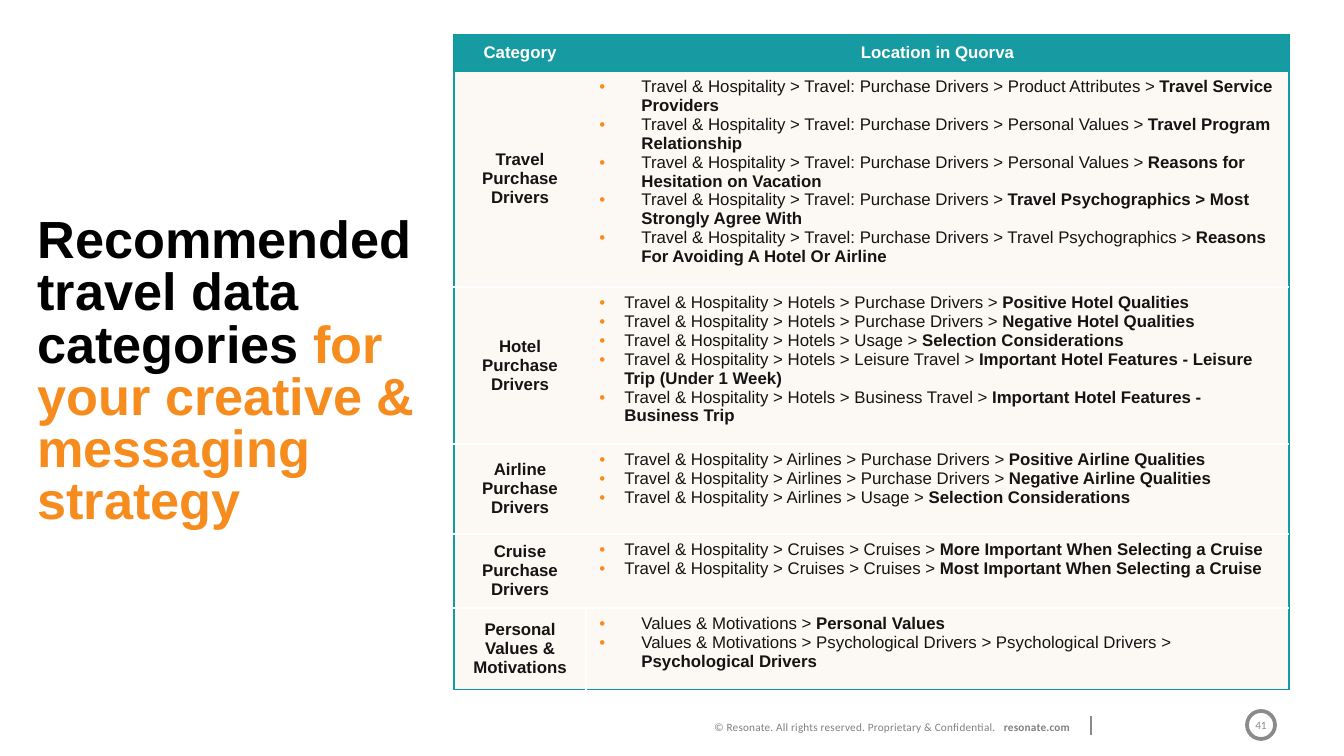
import pptx
import pptx.util
import pptx.dml.color
import pptx.enum.shapes
import pptx.enum.text
import pptx.oxml.ns
import lxml.etree

EMU_PER_PX = 914400 / 134.4
COLORS = {
    "teal": "119CA3", "header": "179BA2", "cream": "FCF8F3", "white": "FFFFFF",
    "black": "000000", "ink": "141414", "orange": "F68C1E",
    "footer": "808080", "gray": "8A8A8A",
}
ALIGN = pptx.enum.text.PP_ALIGN
ANCHOR = pptx.enum.text.MSO_ANCHOR
qn = pptx.oxml.ns.qn


def px(*lengths):
    return [pptx.util.Emu(round(length * EMU_PER_PX)) for length in lengths]


def add_span(para, text, color, **formats):
    span = para.add_run()
    span.text = text
    for name, value in formats.items():
        setattr(span.font, name, value)
    span.font.color.rgb = pptx.dml.color.RGBColor.from_string(COLORS[color])
    return span


deck = pptx.Presentation()
deck.slide_width, deck.slide_height = px(1344, 756)
page = deck.slides.add_slide(deck.slide_layouts[5])

# Title
title = page.shapes.title
title.left, title.top, title.width, title.height = px(24, 210, 487, 301)
frame = title.text_frame
frame.auto_size = pptx.enum.text.MSO_AUTO_SIZE.NONE
frame.vertical_anchor = ANCHOR.TOP
para = frame.paragraphs[0]
para.alignment = ALIGN.LEFT
para.line_spacing = pptx.util.Pt(28)
title_format = {"name": "Arial", "size": pptx.util.Pt(28), "bold": True}
add_span(para, "Recommended travel data categories ", "black", **title_format)
add_span(para, "for your creative & messaging strategy", "orange", **title_format)

# Table content: category, bullet indent, shared start of path, (path, data set)
DRIVERS = "Travel & Hospitality > Travel: Purchase Drivers > "
HOTELS = "Travel & Hospitality > Hotels > "
AIRLINES = "Travel & Hospitality > Airlines > "
CRUISES = "Travel & Hospitality > Cruises > Cruises > "
VALUES = "Values & Motivations > "
sections = [
    ("Travel Purchase Drivers", 42, DRIVERS, [
        ("Product Attributes > ", "Travel Service Providers"),
        ("Personal Values > ", "Travel Program Relationship"),
        ("Personal Values > ", "Reasons for Hesitation on Vacation"),
        ("", "Travel Psychographics > Most Strongly Agree With"),
        ("Travel Psychographics > ", "Reasons For Avoiding A Hotel Or Airline"),
    ]),
    ("Hotel Purchase Drivers", 25, HOTELS, [
        ("Purchase Drivers > ", "Positive Hotel Qualities"),
        ("Purchase Drivers > ", "Negative Hotel Qualities"),
        ("Usage > ", "Selection Considerations"),
        ("Leisure Travel > ", "Important Hotel Features - Leisure Trip (Under 1 Week)"),
        ("Business Travel > ", "Important Hotel Features - Business Trip"),
    ]),
    ("Airline Purchase Drivers", 25, AIRLINES, [
        ("Purchase Drivers > ", "Positive Airline Qualities"),
        ("Purchase Drivers > ", "Negative Airline Qualities"),
        ("Usage > ", "Selection Considerations"),
    ]),
    ("Cruise Purchase Drivers", 25, CRUISES, [
        ("", "More Important When Selecting a Cruise"),
        ("", "Most Important When Selecting a Cruise"),
    ]),
    ("Personal Values & Motivations", 42, VALUES, [
        ("", "Personal Values"),
        ("Psychological Drivers > Psychological Drivers > ", "Psychological Drivers"),
    ]),
]
column_widths = [132, 703]
row_heights = [36, 216, 157, 90, 74, 82]
last = len(sections)

table = page.shapes.add_table(
    len(row_heights), 2, *px(454, 35, sum(column_widths), sum(row_heights))).table
table.horz_banding = False
for column, width in zip(table.columns, px(*column_widths)):
    column.width = width
for row, height in zip(table.rows, px(*row_heights)):
    row.height = height

# Borders and fills: teal outside and under the header, white between rows
outer, inner = ("teal", 0.75), ("white", 1)
for r in range(last + 1):
    middle = inner if r == last else None
    for c in range(2):
        cell = table.cell(r, c)
        borders = {
            "lnL": middle if c else outer,
            "lnR": outer if c else middle,
            "lnT": outer if r < 2 else inner,
            "lnB": outer if r in (0, last) else inner,
        }
        properties = cell._tc.get_or_add_tcPr()
        for side, border in borders.items():
            line = lxml.etree.SubElement(properties, qn("a:" + side))
            if border:
                color, points = border
                line.set("w", str(pptx.util.Pt(points)))
                fill = lxml.etree.SubElement(line, qn("a:solidFill"))
                lxml.etree.SubElement(fill, qn("a:srgbClr"), val=COLORS[color])
            else:
                lxml.etree.SubElement(line, qn("a:noFill"))
        cell.fill.solid()
        cell.fill.fore_color.rgb = pptx.dml.color.RGBColor.from_string(
            COLORS["cream" if r else "header"])

# Header and category labels
cell_format = {"name": "Arial", "size": pptx.util.Pt(9)}
labels = [(0, 0, "Category", "white"), (0, 1, "Location in Quorva", "white")]
labels += [(r, 0, section[0], "ink") for r, section in enumerate(sections, 1)]
for r, c, text, color in labels:
    cell = table.cell(r, c)
    cell.vertical_anchor = ANCHOR.MIDDLE
    para = cell.text_frame.paragraphs[0]
    para.alignment = ALIGN.CENTER
    add_span(para, text, color, bold=True, **cell_format)

# Bulleted locations
for r, (category, indent, start, items) in enumerate(sections, 1):
    frame = table.cell(r, 1).text_frame
    hang = px(indent)[0]
    for i, (path_text, data_set) in enumerate(items):
        para = frame.add_paragraph() if i else frame.paragraphs[0]
        properties = para._p.get_or_add_pPr()
        properties.set("marL", str(hang))
        properties.set("indent", str(-hang))
        tint = lxml.etree.SubElement(properties, qn("a:buClr"))
        lxml.etree.SubElement(tint, qn("a:srgbClr"), val=COLORS["orange"])
        lxml.etree.SubElement(properties, qn("a:buFont"), typeface="Arial")
        lxml.etree.SubElement(properties, qn("a:buChar"), char="•")
        add_span(para, start + path_text, "ink", bold=False, **cell_format)
        add_span(para, data_set, "ink", bold=True, **cell_format)

# Footer text, with a widened space before the web address
footer = page.shapes.add_textbox(*px(0, 714, 1083, 27))
frame = footer.text_frame
frame.word_wrap = True
para = frame.paragraphs[0]
para.alignment = ALIGN.RIGHT
footer_format = {"name": "Calibri", "size": pptx.util.Pt(6)}
for text, bold, spacing in [
    ("© Resonate. All rights reserved. Proprietary & Confidential.", False, 10),
    (" ", False, 300),
    ("resonate.com", True, 10),
]:
    span = add_span(para, text, "footer", bold=bold, **footer_format)
    span._r.get_or_add_rPr().set("spc", str(spacing))

# Footer divider
divider = page.shapes.add_connector(
    pptx.enum.shapes.MSO_CONNECTOR.STRAIGHT, *px(1091, 716, 1091, 735))
divider.line.width = pptx.util.Pt(0.75)
divider.line.color.rgb = pptx.dml.color.RGBColor.from_string(COLORS["gray"])
lxml.etree.SubElement(divider._element.spPr, qn("a:effectLst"))

# Page number
badge = page.shapes.add_shape(
    pptx.enum.shapes.MSO_SHAPE.OVAL, *px(1247, 711, 28, 28))
badge.shadow.inherit = False
badge.fill.background()
badge.line.width = pptx.util.Pt(2)
badge.line.color.rgb = pptx.dml.color.RGBColor.from_string(COLORS["gray"])
frame = badge.text_frame
frame.word_wrap = False
frame.vertical_anchor = ANCHOR.MIDDLE
frame.paragraphs[0].alignment = ALIGN.CENTER
add_span(frame.paragraphs[0], "41", "gray", **footer_format)

deck.save("out.pptx")
